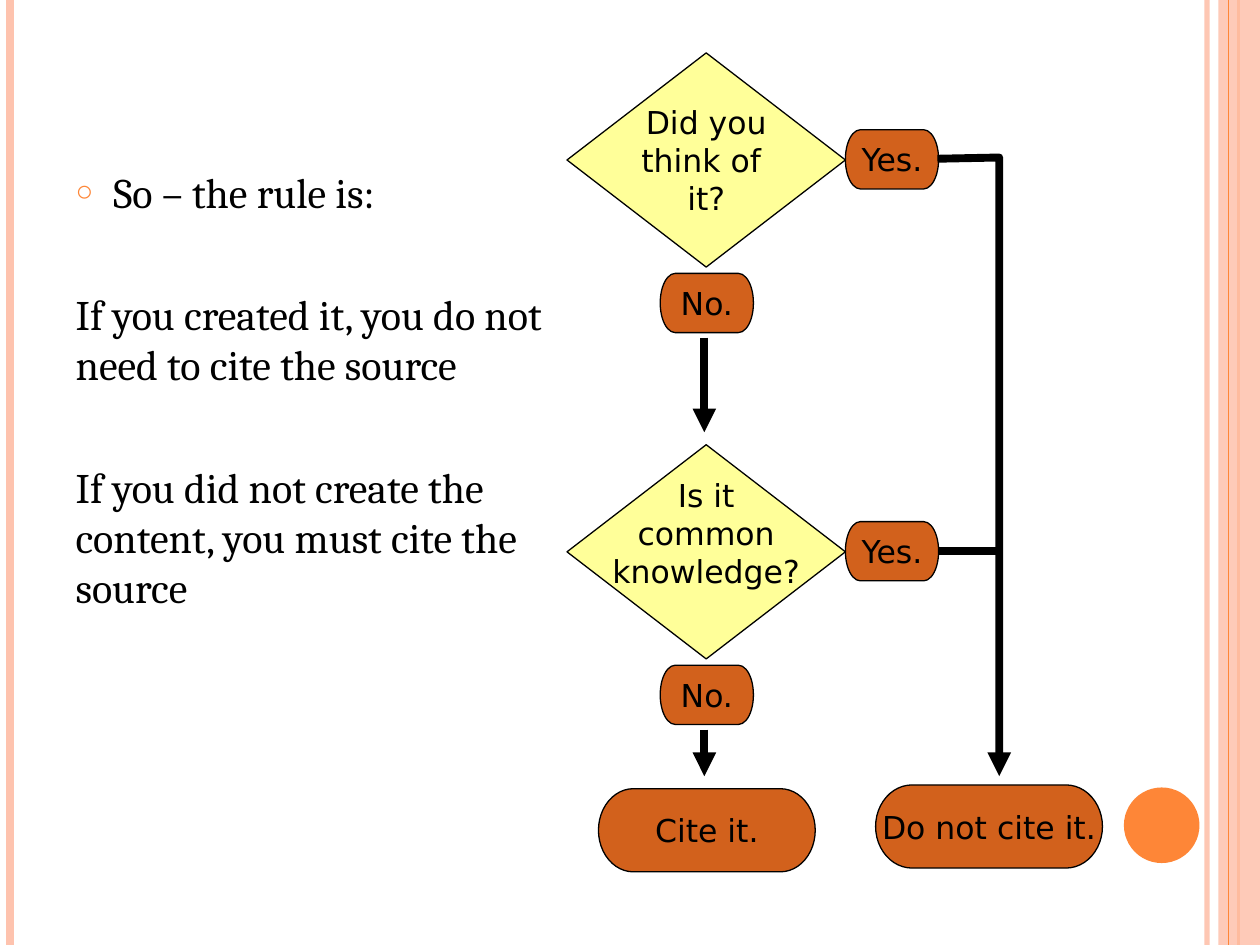
from dataclasses import dataclass

from lxml import etree
from pptx import Presentation
from pptx import util as u
from pptx.dml.color import RGBColor
from pptx.enum import shapes, text
from pptx.oxml.ns import qn


@dataclass(frozen=True)
class Theme:
    ink: str = "000000"
    peach: str = "FEC3AE"
    orange: str = "FE8637"
    question: str = "FFFF99"
    answer: str = "D2611C"
    body_font: str = "Cambria"
    chart_font: str = "DejaVu Sans"
    body_size: float = 24
    chart_size: float = 18
    outline: float = 0.75
    arrow: float = 4.5


class SlideBuilder:
    def __init__(self, slide, theme):
        self.slide = slide
        self.theme = theme

    def paint(self, color_format, color, opacity=100):
        color_format.rgb = RGBColor.from_string(color)
        if opacity < 100:
            element = color_format._xFill.find(qn("a:srgbClr"))
            etree.SubElement(element, qn("a:alpha"), val=str(opacity * 1000))

    def stroke(self, shape, color, width, arrow=False, opacity=100):
        shape.line.width = u.Pt(width)
        shape.line.fill.solid()
        self.paint(shape.line.fill.fore_color, color, opacity)
        if arrow:
            etree.SubElement(shape.line._ln, qn("a:tailEnd"), type="triangle")

    def line(self, start, end, color, width, arrow=False, opacity=100):
        connector = self.slide.shapes.add_connector(
            shapes.MSO_CONNECTOR.STRAIGHT, *map(u.Inches, start + end))
        self.stroke(connector, color, width, arrow, opacity)
        etree.SubElement(connector._element.spPr, qn("a:effectLst"))
        return connector

    def shape(self, kind, box, color, opacity=100):
        shape = self.slide.shapes.add_shape(kind, *map(u.Inches, box))
        shape.shadow.inherit = False
        shape.fill.solid()
        self.paint(shape.fill.fore_color, color, opacity)
        shape.line.fill.background()
        return shape

    def node(self, kind, box, color, lines, bottom=0.05):
        shape = self.shape(kind, box, color)
        self.stroke(shape, self.theme.ink, self.theme.outline)
        frame = shape.text_frame
        frame.word_wrap = False
        frame.vertical_anchor = text.MSO_ANCHOR.MIDDLE
        frame.margin_bottom = u.Inches(bottom)
        frame.text = "\n".join(lines)
        for paragraph in frame.paragraphs:
            paragraph.alignment = text.PP_ALIGN.CENTER
            self.font(paragraph, self.theme.chart_font, self.theme.chart_size)
        return shape

    def question(self, left, top, lines, bottom=0.05):
        return self.node(shapes.MSO_SHAPE.FLOWCHART_DECISION,
                         (left, top, 2.21, 1.7), self.theme.question, lines, bottom)

    def answer(self, left, top, label, width=0.74, height=0.47):
        return self.node(shapes.MSO_SHAPE.FLOWCHART_TERMINATOR,
                         (left, top, width, height), self.theme.answer, [label])

    def path_arrow(self, points):
        start, *corners = [(u.Inches(x), u.Inches(y)) for x, y in points]
        builder = self.slide.shapes.build_freeform(*start)
        builder.add_line_segments(corners, close=False)
        shape = builder.convert_to_shape()
        shape.shadow.inherit = False
        shape.fill.background()
        self.stroke(shape, self.theme.ink, self.theme.arrow, arrow=True)

    def font(self, paragraph, name, size):
        paragraph.font.name = name
        paragraph.font.size = u.Pt(size)
        paragraph.font.color.rgb = RGBColor.from_string(self.theme.ink)

    def indent(self, paragraph, amount, bullet=None):
        properties = paragraph._p.get_or_add_pPr()
        properties.set("marL", str(u.Inches(amount)))
        properties.set("indent", str(-u.Inches(amount)))
        marks = [etree.Element(qn("a:buNone"))]
        if bullet:
            color = etree.Element(qn("a:buClr"))
            etree.SubElement(color, qn("a:srgbClr"), val=self.theme.orange)
            marks = [color,
                     etree.Element(qn("a:buSzPct"), val="70000"),
                     etree.Element(qn("a:buChar"), char=bullet)]
        default_run = properties.find(qn("a:defRPr"))
        for mark in marks:
            default_run.addprevious(mark)

    def body(self, box, heading, rules):
        placeholder = self.slide.placeholders[1]
        placeholder.left, placeholder.top, placeholder.width, placeholder.height = map(
            u.Inches, box)
        frame = placeholder.text_frame
        frame.word_wrap = True
        frame.auto_size = text.MSO_AUTO_SIZE.NONE
        frame.vertical_anchor = text.MSO_ANCHOR.TOP
        frame.text = "\n".join([heading, *rules])
        for index, paragraph in enumerate(frame.paragraphs):
            self.font(paragraph, self.theme.body_font, self.theme.body_size)
            paragraph.space_before = u.Pt(41 if index else 6)
            self.indent(paragraph, 0 if index else 0.3, None if index else "○")

    def decoration(self):
        theme = self.theme
        for x, color, width, opacity in [
            (9.58, theme.peach, 3, 93),
            (0.08, theme.peach, 4.5, 100),
            (9.83, theme.orange, 1.5, 100),
        ]:
            self.line((x, 0), (x, 7.5), color, width, opacity=opacity)
        self.shape(shapes.MSO_SHAPE.RECTANGLE, (9.67, 0, 0.33, 7.5), theme.peach, 87)
        self.line((9.75, 0), (9.75, 7.5), theme.orange, 0.75)
        self.shape(shapes.MSO_SHAPE.OVAL, (8.92, 6.25, 0.6, 0.6), theme.orange)


def main():
    presentation = Presentation()
    presentation.slide_width = u.Inches(10)
    presentation.slide_height = u.Inches(7.5)
    slide = presentation.slides.add_slide(presentation.slide_layouts[1])
    title = slide.shapes.title._element
    title.getparent().remove(title)

    theme = Theme()
    builder = SlideBuilder(slide, theme)
    builder.decoration()
    builder.body((0.5, 1.27, 4, 5), "So – the rule is:", [
        "If you created it, you do not need to cite the source",
        "If you did not create the content, you must cite the source",
    ])

    for top, lines, bottom, arrow_end in [
        (0.42, ["Did you", "think of ", "it?"], 0.05, 3.43),
        (3.53, ["Is it", "common", "knowledge?"], 0.35, 6.16),
    ]:
        builder.question(4.5, top, lines, bottom)
        builder.answer(5.24, top + 1.75, "No.")
        yes = builder.answer(6.71, top + 0.61, "Yes.")
        builder.line((5.59, top + 2.26), (5.59, arrow_end),
                     theme.ink, theme.arrow, arrow=True)

    builder.answer(4.75, 6.26, "Cite it.", 1.72, 0.66)
    builder.answer(6.95, 6.23, "Do not cite it.", 1.8, 0.66)
    builder.path_arrow([(7.44, 1.26), (7.93, 1.25), (7.93, 6.16)])
    branch = builder.line((7.45, 4.37), (7.93, 4.37), theme.ink, theme.arrow)
    branch.begin_connect(yes, 3)
    branch.end_y = branch.begin_y

    presentation.save("out.pptx")


if __name__ == "__main__":
    main()
